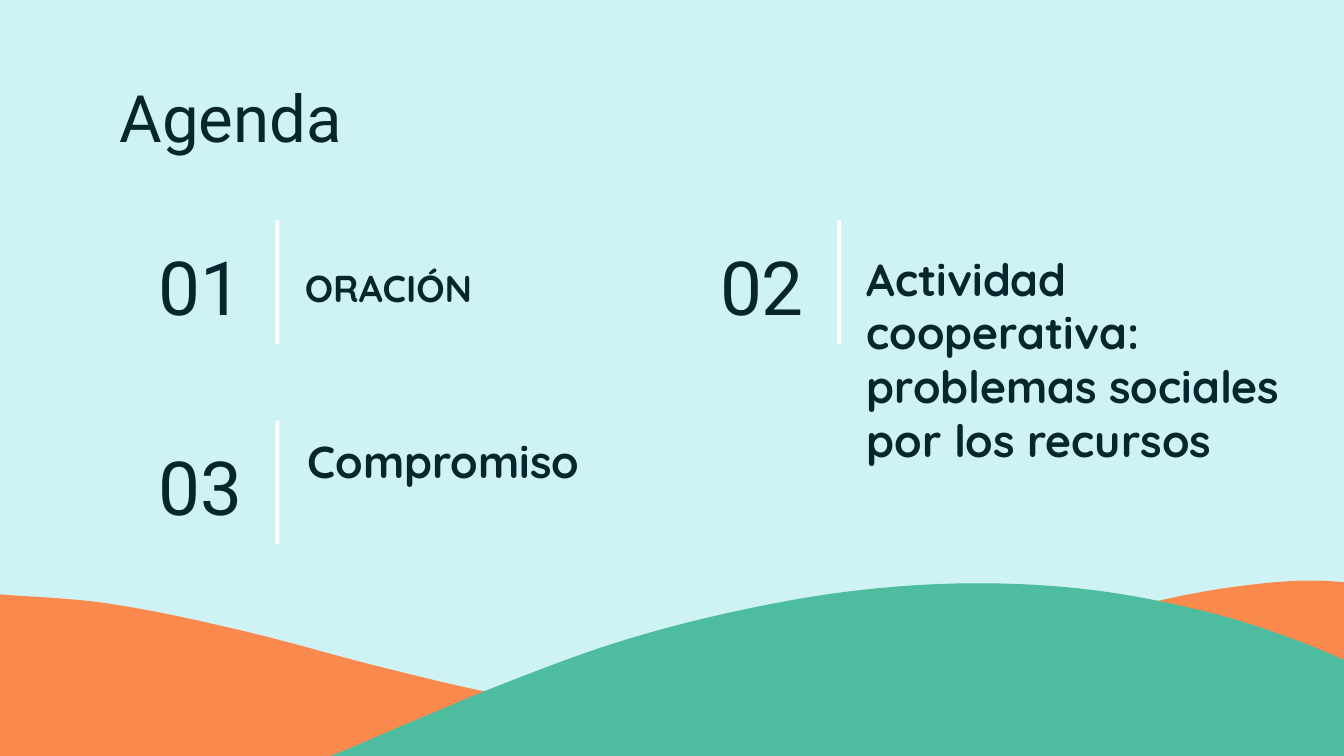
from typing import NamedTuple

from pptx import Presentation
from pptx.dml.color import RGBColor
from pptx.enum.shapes import MSO_SHAPE
from pptx.enum.text import MSO_ANCHOR, MSO_AUTO_SIZE, PP_ALIGN
from pptx.util import Inches, Pt

WIDTH = 10
HEIGHT = WIDTH * 9 / 16
SKY, ORANGE, GREEN, WHITE, INK = "CFF3F4", "FA894D", "4EBD9F", "FFFFFF", "08242C"
COLUMNS, ROWS = (0.89, 5.07), (1.64, 3.13)
NUMBER_W, ROW_H = 1.01, 0.92
BAR_DX, BAR_W = 1.16, 0.03
STEPS = 8


class Item(NamedTuple):
    """An agenda entry placed by column and row, with its label's offset and size."""
    number: str
    label: str
    col: int
    row: int
    dx: float
    dy: float
    width: float
    height: float
    size: int


class Hill(NamedTuple):
    """A hill given by its ridge points, base and colour."""
    ridge: list[tuple[float, float]]
    base: float
    color: str


ITEMS = [
    Item("01", "ORACIÓN", 0, 0, 1.28, 0.23, 2.76, 0.37, 20),
    Item("02", "Actividad cooperativa: problemas sociales por los recursos",
         1, 0, 1.28, 0.13, 3.65, 0.37, 24),
    Item("03", "Compromiso", 0, 1, 1.3, 0, 4.35, 2.2, 24),
]

HILLS = [
    Hill([(-0.04, 4.42), (0.8, 4.49), (1.79, 4.69), (2.86, 4.97), (3.78, 5.18),
          (4.47, 5.27), (5, 5.29), (5.66, 5.24), (6.38, 5.1), (7.15, 4.9),
          (8, 4.64), (8.58, 4.48), (9.16, 4.37), (9.74, 4.32), (10.3, 4.36)],
         6.19, ORANGE),
    Hill([(0.01, 5.99), (0.56, 6.04), (1.18, 5.99), (1.79, 5.85), (2.42, 5.64),
          (3.04, 5.38), (3.79, 5.07), (4.59, 4.78), (5.42, 4.56), (6.32, 4.4),
          (7.23, 4.34), (8.13, 4.39), (9.01, 4.56), (9.69, 4.78), (10.35, 5.07)],
         6.22, GREEN),
]


def rgb(color: str) -> RGBColor:
    """Turn a hex string into a colour."""
    return RGBColor.from_string(color)


def paint(sp, color: str) -> None:
    """Give a shape a plain fill without line or shadow."""
    sp.shadow.inherit = False
    sp.fill.solid()
    sp.fill.fore_color.rgb = rgb(color)
    sp.line.fill.background()


def write(sp, text: str, *, size: float, font: str = "Roboto", bold: bool = False,
          align=PP_ALIGN.LEFT, anchor=MSO_ANCHOR.TOP, after: float = 0) -> None:
    """Fill a shape with one formatted paragraph."""
    tf = sp.text_frame
    tf.word_wrap, tf.auto_size, tf.vertical_anchor = True, MSO_AUTO_SIZE.NONE, anchor
    tf.margin_left = tf.margin_right = tf.margin_top = tf.margin_bottom = Inches(0.1)
    p = tf.paragraphs[0]
    p.alignment, p.line_spacing = align, 1.0
    p.space_before, p.space_after = Pt(0), Pt(after)
    r = p.add_run()
    r.text = text
    r.font.name, r.font.size, r.font.bold = font, Pt(size), bold
    r.font.color.rgb = rgb(INK)


def smooth(pts: list[tuple[float, float]]) -> list[tuple[float, float]]:
    """Return points on a smooth Hermite curve through the given points."""
    last = len(pts) - 1
    slopes = []
    for i in range(len(pts)):
        (xa, ya), (xb, yb) = pts[max(i - 1, 0)], pts[min(i + 1, last)]
        slopes.append((yb - ya) / (xb - xa))
    curve = []
    for i in range(last):
        (xa, ya), (xb, yb) = pts[i], pts[i + 1]
        dx = xb - xa
        for k in range(STEPS):
            t = k / STEPS
            ease = t * t * (3 - 2 * t)
            bend = slopes[i] * t * (1 - t) ** 2 - slopes[i + 1] * t * t * (1 - t)
            curve.append((xa + dx * t, ya + (yb - ya) * ease + dx * bend))
    return curve + [pts[-1]]


def draw_hill(s, hill: Hill) -> None:
    """Draw one hill as a closed outline."""
    (left, _), (right, _) = hill.ridge[0], hill.ridge[-1]
    outline = smooth(hill.ridge) + [(right, hill.base), (left, hill.base)]
    start, *rest = [(Inches(x), Inches(y)) for x, y in outline]
    fb = s.shapes.build_freeform(*start)
    fb.add_line_segments(rest)
    paint(fb.convert_to_shape(), hill.color)


def draw_item(s, item: Item) -> None:
    """Draw the number, divider and label of one agenda entry."""
    x, y = COLUMNS[item.col], ROWS[item.row]
    number = s.shapes.add_textbox(*map(Inches, (x, y, NUMBER_W, ROW_H)))
    write(number, item.number, size=40, align=PP_ALIGN.RIGHT, anchor=MSO_ANCHOR.BOTTOM)
    label = s.shapes.add_textbox(
        *map(Inches, (x + item.dx, y + item.dy, item.width, item.height)))
    write(label, item.label, size=item.size, font="Quicksand", bold=True, after=16)
    bar = s.shapes.add_shape(
        MSO_SHAPE.RECTANGLE, *map(Inches, (x + BAR_DX, y, BAR_W, ROW_H)))
    paint(bar, WHITE)


def main() -> None:
    """Build and save the agenda slide."""
    prs = Presentation()
    prs.slide_width, prs.slide_height = Inches(WIDTH), Inches(HEIGHT)
    s = prs.slides.add_slide(prs.slide_layouts[5])
    s.background.fill.solid()
    s.background.fill.fore_color.rgb = rgb(SKY)
    title = s.shapes.title
    title.left, title.top, title.width, title.height = map(
        Inches, (0.79, 0.59, 8.42, 0.55))
    write(title, "Agenda", size=35, anchor=MSO_ANCHOR.MIDDLE)
    for hill in HILLS:
        draw_hill(s, hill)
    for item in ITEMS:
        draw_item(s, item)
    prs.save("out.pptx")


if __name__ == "__main__":
    main()
